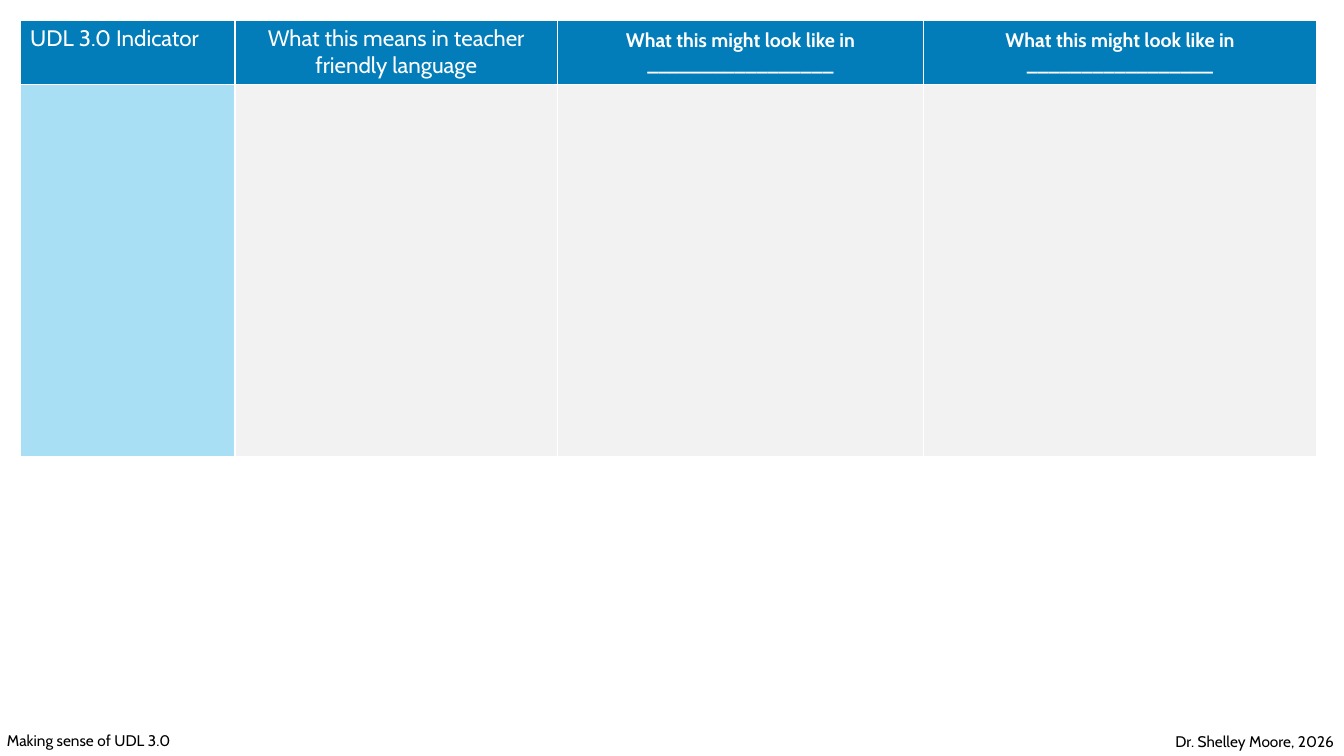
from dataclasses import dataclass

from lxml.etree import SubElement
from pptx import Presentation
from pptx.dml.color import RGBColor
from pptx.enum.text import MSO_ANCHOR, PP_ALIGN
from pptx.oxml.ns import qn
from pptx.util import Inches, Pt


@dataclass(frozen=True)
class Theme:
    font: str = "Cabin"
    header: str = "027DB9"
    indicator: str = "A8DFF4"
    answer: str = "F2F2F2"
    white: str = "FFFFFF"
    black: str = "000000"
    heading_size: int = 16
    prompt_size: int = 14
    footer_size: int = 11
    border: int = 1


THEME = Theme()
PROMPT = "What this might look like in _________________"
# Heading, column width, type size, bold, alignment, anchor
COLUMNS = [
    ("UDL 3.0 Indicator", 2.13, THEME.heading_size, False,
     PP_ALIGN.LEFT, MSO_ANCHOR.TOP),
    ("What this means in teacher friendly language", 3.2,
     THEME.heading_size, False, PP_ALIGN.CENTER, MSO_ANCHOR.MIDDLE),
    (PROMPT, 3.63, THEME.prompt_size, True,
     PP_ALIGN.CENTER, MSO_ANCHOR.MIDDLE),
    (PROMPT, 3.9, THEME.prompt_size, True,
     PP_ALIGN.CENTER, MSO_ANCHOR.MIDDLE),
]
ROW_HEIGHTS = (0.63, 3.69)


def write(frame, text, size, color, align, bold=False):
    frame.text = text
    paragraph = frame.paragraphs[0]
    paragraph.alignment = align
    font = paragraph.runs[0].font
    font.name, font.size, font.bold = THEME.font, Pt(size), bold
    font.color.rgb = RGBColor.from_string(color)


def paint_cell(cell, color):
    # Borders come before the fill in the cell properties
    properties = cell._tc.get_or_add_tcPr()
    for side in ("a:lnL", "a:lnR", "a:lnT", "a:lnB"):
        line = SubElement(properties, qn(side), w=str(Pt(THEME.border)))
        fill = SubElement(line, qn("a:solidFill"))
        SubElement(fill, qn("a:srgbClr"), val=THEME.white)
    cell.fill.solid()
    cell.fill.fore_color.rgb = RGBColor.from_string(color)


def add_indicator_table(slide, left, top, width, height):
    table = slide.shapes.add_table(
        len(ROW_HEIGHTS), len(COLUMNS), Inches(left), Inches(top),
        Inches(width), Inches(height)).table
    for row, row_height in zip(table.rows, ROW_HEIGHTS):
        row.height = Inches(row_height)
    for index, (heading, column_width, size, bold, align, anchor) in enumerate(COLUMNS):
        table.columns[index].width = Inches(column_width)
        header, answer = table.cell(0, index), table.cell(1, index)
        paint_cell(header, THEME.header)
        paint_cell(answer, THEME.answer if index else THEME.indicator)
        header.vertical_anchor = anchor
        write(header.text_frame, heading, size, THEME.white, align, bold)


def add_footer(slide, text, align, left, top, width, height):
    frame = slide.shapes.add_textbox(
        Inches(left), Inches(top), Inches(width), Inches(height)).text_frame
    frame.word_wrap = True
    write(frame, text, THEME.footer_size, THEME.black, align)


def main():
    deck = Presentation()
    deck.slide_width, deck.slide_height = Inches(13.33), Inches(7.5)
    slide = deck.slides.add_slide(deck.slide_layouts[6])

    # Indicator table
    total_width = sum(column[1] for column in COLUMNS)
    add_indicator_table(slide, 0.2, 0.2, total_width, sum(ROW_HEIGHTS))

    # Footer: topic and author
    add_footer(slide, "Making sense of UDL 3.0", PP_ALIGN.LEFT,
               -0.03, 7.2, 6.67, 0.29)
    add_footer(slide, "Dr. Shelley Moore, 2026", PP_ALIGN.RIGHT,
               10.48, 7.21, 2.85, 0.29)

    deck.save("out.pptx")


if __name__ == "__main__":
    main()
